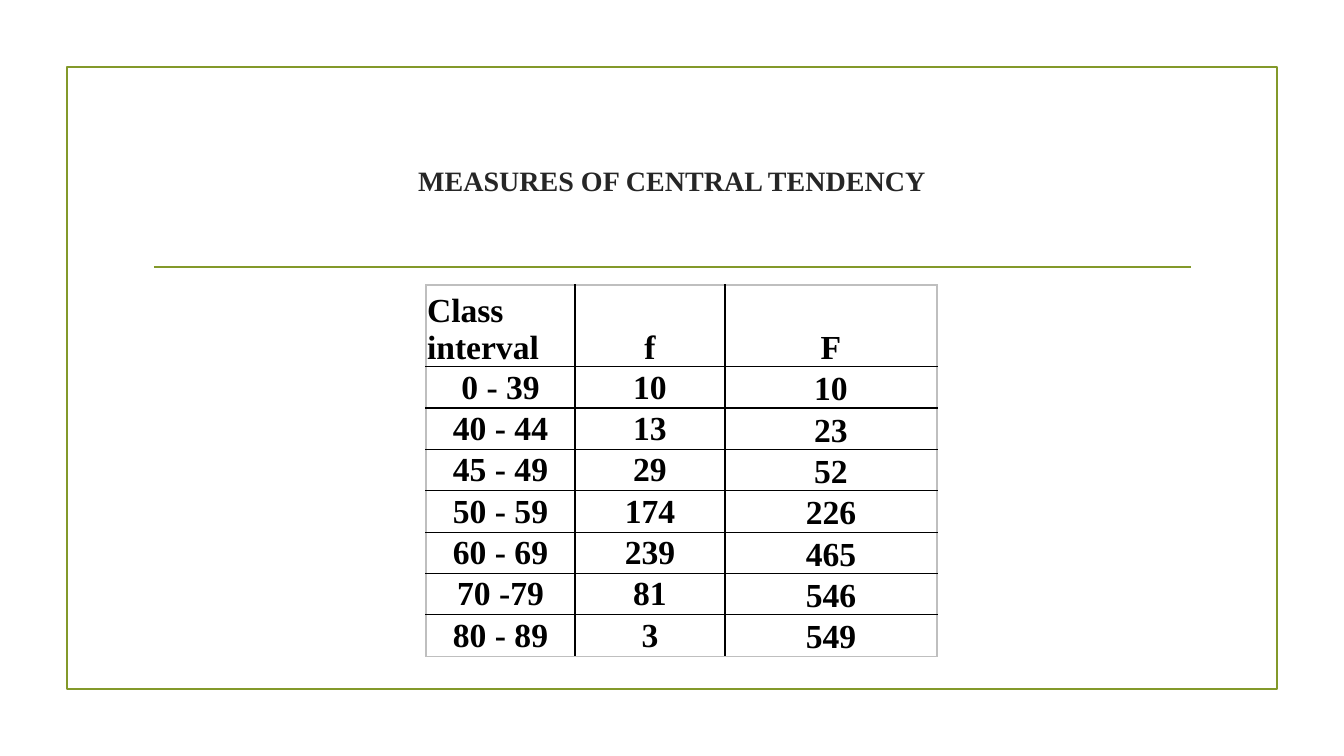
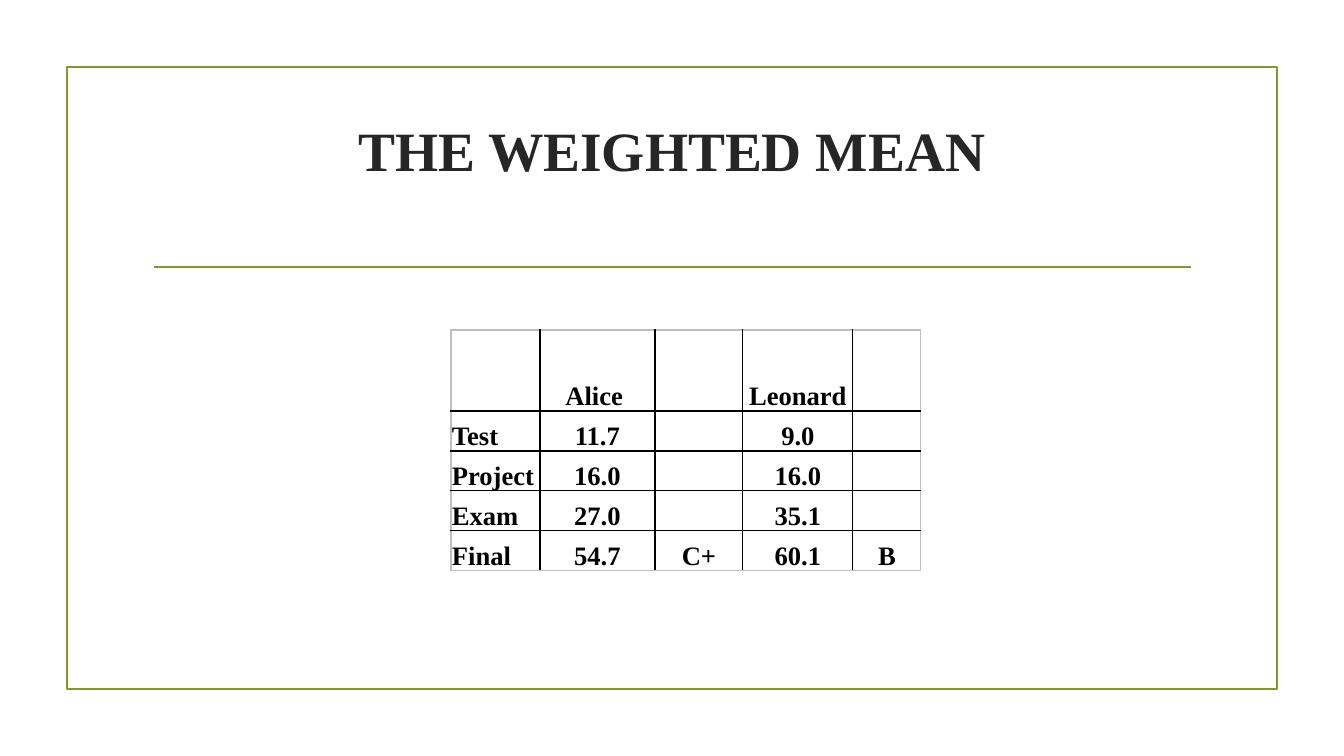
from lxml import etree
from pptx import Presentation
from pptx.dml.color import RGBColor
from pptx.enum.shapes import MSO_CONNECTOR, MSO_SHAPE
from pptx.enum.text import MSO_ANCHOR, PP_ALIGN
from pptx.oxml.ns import qn
from pptx.util import Emu, Pt

PX = 914400 / 100.8
WIDTH, HEIGHT = 1344, 756
FONT = "Times New Roman"
GREEN = RGBColor(0x83, 0x99, 0x2A)
DARK = RGBColor(0x26, 0x26, 0x26)
BLACK = RGBColor(0, 0, 0)
GREY = RGBColor(0xBF, 0xBF, 0xBF)
LEFT, CENTER = PP_ALIGN.LEFT, PP_ALIGN.CENTER
MIDDLE, BOTTOM = MSO_ANCHOR.MIDDLE, MSO_ANCHOR.BOTTOM
RECTANGLE, STRAIGHT = MSO_SHAPE.RECTANGLE, MSO_CONNECTOR.STRAIGHT

FRAME_BOX = (67, 67, 1210, 622)
TITLE_BOX = (143, 108, 1058, 144)
RULE = (154, 267, 1191, 267)

FREQUENCIES = [
    ("Class interval", "f", "F"),
    ("0 - 39", "10", "10"),
    ("40 - 44", "13", "23"),
    ("45 - 49", "29", "52"),
    ("50 - 59", "174", "226"),
    ("60 - 69", "239", "465"),
    ("70 -79", "81", "546"),
    ("80 - 89", "3", "549"),
]
MARKS = [
    ("", "Alice ", "", "Leonard", ""),
    ("Test", "11.7", "", "9.0", ""),
    ("Project", "16.0", "", "16.0", ""),
    ("Exam", "27.0", "", "35.1", ""),
    ("Final", "54.7", "C+", "60.1", "B"),
]


def px(n):
    return Emu(round(n * PX))


def write(tf, text, size, color=BLACK, align=CENTER):
    p = tf.paragraphs[0]
    p.alignment = align
    p.font.size = Pt(size)
    r = p.add_run()
    r.text = text
    r.font.name, r.font.size, r.font.bold = FONT, Pt(size), True
    r.font.color.rgb = color


def add_frame(slide):
    """Draw the green border and the rule under the title."""
    s = slide.shapes.add_shape(RECTANGLE, *map(px, FRAME_BOX))
    s.shadow.inherit = False
    s.fill.background()
    rule = slide.shapes.add_connector(STRAIGHT, *map(px, RULE))
    etree.SubElement(rule._element.spPr, qn("a:effectLst"))
    for line in (s.line, rule.line):
        line.color.rgb = GREEN
        line.width = Pt(1.25)


def add_title(slide, text, size, lift):
    """Centre the title in its box, above a bottom inset of lift px."""
    tf = slide.shapes.add_textbox(*map(px, TITLE_BOX)).text_frame
    tf.word_wrap = True
    tf.vertical_anchor = MIDDLE
    tf.margin_top, tf.margin_bottom = px(5), px(5 + lift)
    write(tf, text, size, DARK)


def set_borders(cell, colors):
    """Set left, right, top and bottom borders, in that order."""
    tc_pr = cell._tc.get_or_add_tcPr()
    for i, (side, color) in enumerate(zip("LRTB", colors)):
        ln = etree.Element(qn(f"a:ln{side}"), w=str(Pt(1)))
        fill = etree.SubElement(ln, qn("a:solidFill"))
        etree.SubElement(fill, qn("a:srgbClr"), val=str(color))
        tc_pr.insert(i, ln)


def add_grid(slide, x, y, widths, header_height, row_height, rows, size,
             cell_style):
    """Add a table; cell_style(row, col) gives alignment and anchor."""
    heights = [header_height] + [row_height] * (len(rows) - 1)
    box = (x, y, sum(widths), sum(heights))
    table = slide.shapes.add_table(len(rows), len(widths),
                                   *map(px, box)).table
    table.first_row = table.horz_banding = False
    for col, width in zip(table.columns, widths):
        col.width = px(width)
    for row, height in zip(table.rows, heights):
        row.height = px(height)
    last_row, last_col = len(rows) - 1, len(widths) - 1
    for i, values in enumerate(rows):
        for j, value in enumerate(values):
            cell = table.cell(i, j)
            align, cell.vertical_anchor = cell_style(i, j)
            cell.margin_left = cell.margin_right = cell.margin_top = px(1)
            cell.margin_bottom = 0
            cell.fill.background()
            outer = (j == 0, j == last_col, i == 0, i == last_row)
            set_borders(cell, [GREY if edge else BLACK for edge in outer])
            write(cell.text_frame, value, size, align=align)


def frequency_style(row, col):
    return (LEFT if row == col == 0 else CENTER,
            BOTTOM if row == 0 or col == 2 else MIDDLE)


def marks_style(row, col):
    return LEFT if col == 0 else CENTER, BOTTOM


def add_table_slide(prs, title, title_size, lift, **grid):
    slide = prs.slides.add_slide(prs.slide_layouts[6])
    add_frame(slide)
    add_title(slide, title, title_size, lift)
    add_grid(slide, **grid)


def main():
    prs = Presentation()
    prs.slide_width, prs.slide_height = px(WIDTH), px(HEIGHT)
    add_table_slide(prs, "MEASURES OF CENTRAL TENDENCY", 20, 0,
                    x=426, y=285, widths=(149, 150, 212),
                    header_height=81, row_height=41, rows=FREQUENCIES,
                    size=24, cell_style=frequency_style)
    add_table_slide(prs, "THE WEIGHTED MEAN", 39.6, 62,
                    x=451, y=330, widths=(89, 115, 88, 110, 68),
                    header_height=81, row_height=40, rows=MARKS,
                    size=19, cell_style=marks_style)
    prs.save("out.pptx")


if __name__ == "__main__":
    main()
